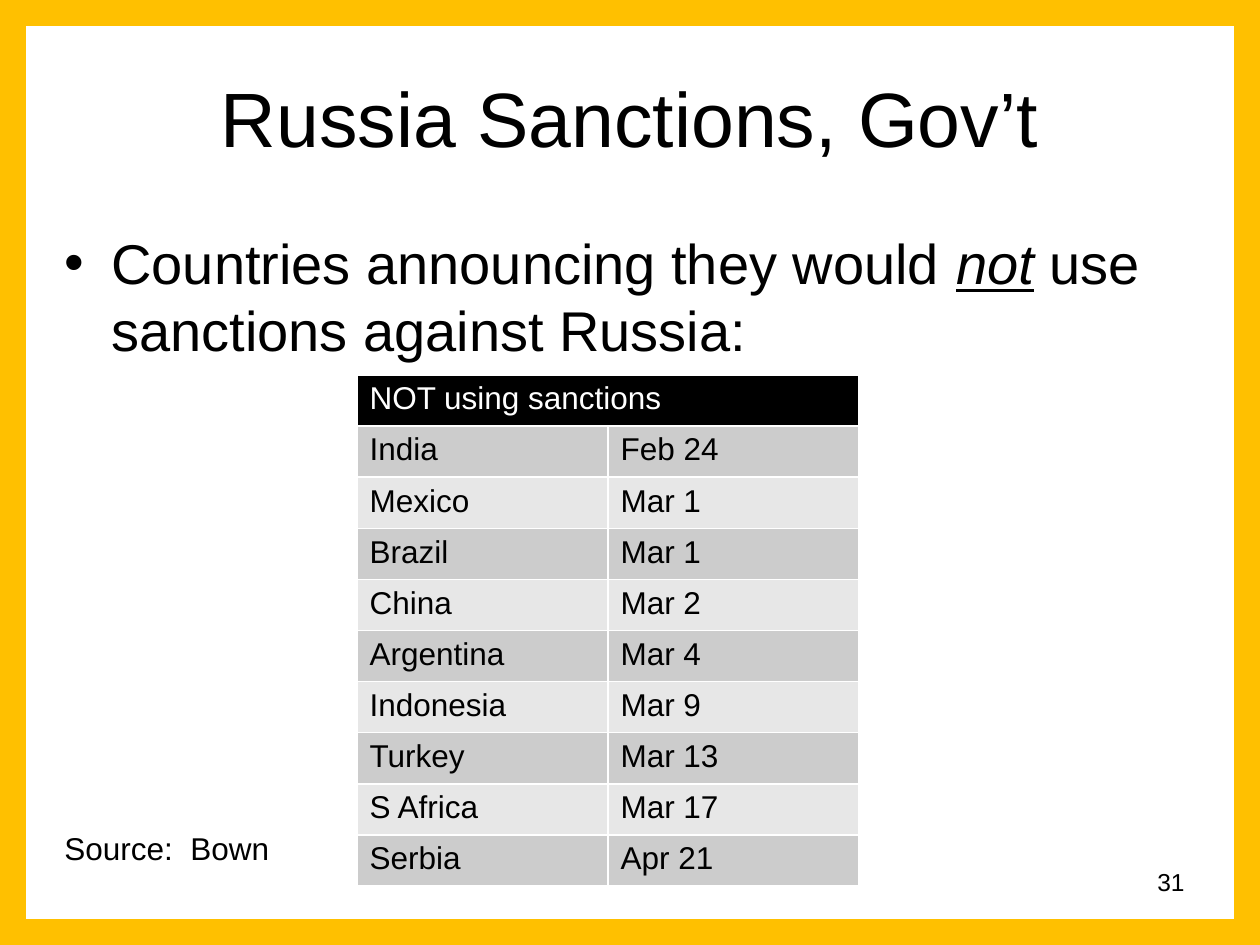
from lxml import etree
from pptx import Presentation
from pptx.dml.color import RGBColor
from pptx.enum import shapes, text
from pptx.oxml import ns
from pptx.util import Emu, Pt

PX = 914400 / 126
COLORS = {"ink": "000000", "paper": "FFFFFF", "frame": "FFC000",
          "dark_band": "CCCCCC", "light_band": "E7E7E7"}
ROWS = [("India", "Feb 24"), ("Mexico", "Mar 1"), ("Brazil", "Mar 1"),
        ("China", "Mar 2"), ("Argentina", "Mar 4"), ("Indonesia", "Mar 9"),
        ("Turkey", "Mar 13"), ("S Africa", "Mar 17"), ("Serbia", "Apr 21")]


def px(n):
    return Emu(round(n * PX))


def rgb(name):
    return RGBColor.from_string(COLORS[name])


def add_run(p, words, size, color="ink", **formats):
    r = p.add_run()
    r.text = words
    r.font.color.rgb = rgb(color)
    for key, value in {"name": "Arial", "size": Pt(size), **formats}.items():
        setattr(r.font, key, value)


def add_text(s, box, runs, size, align=text.PP_ALIGN.LEFT,
             anchor=text.MSO_ANCHOR.TOP):
    tf = s.shapes.add_textbox(*map(px, box)).text_frame
    tf.word_wrap = True
    tf.vertical_anchor = anchor
    p = tf.paragraphs[0]
    p.alignment = align
    for words, formats in runs:
        add_run(p, words, size, **formats)
    return p


def add_bullet(s, box, runs, size, indent):
    p = add_text(s, box, runs, size)
    p.space_before = Pt(size * 0.2)
    pPr = p._p.get_or_add_pPr()
    pPr.set("marL", str(px(indent)))
    pPr.set("indent", str(-px(indent)))
    etree.SubElement(pPr, ns.qn("a:buFont"), typeface="Arial")
    etree.SubElement(pPr, ns.qn("a:buChar"), char="•")


def add_borders(cell):
    tcPr = cell._tc.get_or_add_tcPr()
    for i, side in enumerate(("lnL", "lnR", "lnT", "lnB")):
        ln = etree.Element(ns.qn(f"a:{side}"), w=str(Pt(1)))
        fill = etree.SubElement(ln, ns.qn("a:solidFill"))
        etree.SubElement(fill, ns.qn("a:srgbClr"), val=COLORS["paper"])
        tcPr.insert(i, ln)


def fill_cell(cell, words, band, color="ink"):
    cell.fill.solid()
    cell.fill.fore_color.rgb = rgb(band)
    add_borders(cell)
    if words:
        add_run(cell.text_frame.paragraphs[0], words, 18, color, bold=False)


def add_sanctions_table(s, box, header, rows):
    table = s.shapes.add_table(len(rows) + 1, 2, *map(px, box)).table
    for row in table.rows:
        row.height = px(box[3] / (len(rows) + 1))
    for col, words in enumerate((header, "")):
        fill_cell(table.cell(0, col), words, "ink", "paper")
    table.cell(0, 0).merge(table.cell(0, 1))
    for i, row in enumerate(rows, 1):
        band = "dark_band" if i % 2 else "light_band"
        for col, words in enumerate(row):
            fill_cell(table.cell(i, col), words, band)


def add_frame(s, box, width):
    sp = s.shapes.add_shape(shapes.MSO_SHAPE.RECTANGLE, *map(px, box))
    sp.shadow.inherit = False
    sp.fill.background()
    sp.line.color.rgb = rgb("frame")
    sp.line.width = Pt(width)


def build_slide(prs, box):
    s = prs.slides.add_slide(prs.slide_layouts[6])
    x, y, w, h = box
    add_text(s, (x + 903, y + 861, 294, 65), [("31", {})], 14,
             text.PP_ALIGN.RIGHT)
    add_text(s, (x + 63, y + 38, w - 126, 157),
             [("Russia Sanctions, Gov’t", {})], 44,
             text.PP_ALIGN.CENTER, text.MSO_ANCHOR.MIDDLE)
    add_bullet(s, (x + 52, y + 222, 1145, 639),
               [("Countries announcing they would ", {}),
                ("not", {"italic": True, "underline": True}),
                (" use sanctions against Russia:", {})], 32, 47)
    add_sanctions_table(s, (x + 357, y + 375, 502, 511),
                        "NOT using sanctions", ROWS)
    add_text(s, (x + 52, y + 823, 237, 50), [("Source:  Bown", {})], 18)
    add_frame(s, (x, y, w, h), 30)


def main():
    prs = Presentation()
    prs.slide_width, prs.slide_height = px(1260), px(945)
    build_slide(prs, (0, 0, 1260, 945))
    prs.save("out.pptx")


if __name__ == "__main__":
    main()
